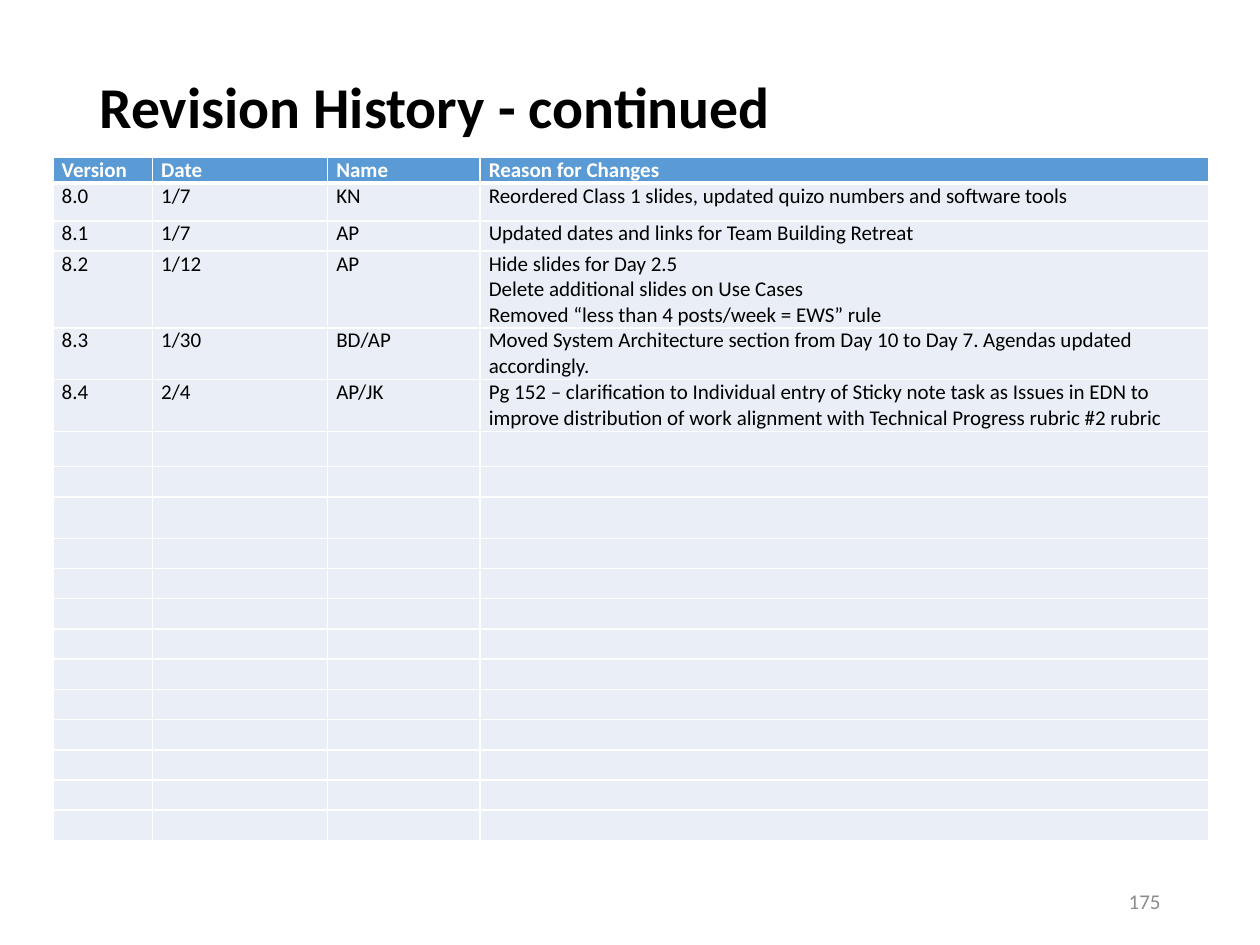
"""Build the continued revision history slide."""
from dataclasses import dataclass

import lxml.etree
import pptx
import pptx.dml.color
import pptx.enum.text
import pptx.oxml.ns
import pptx.util
from pptx.util import Inches


@dataclass(frozen=True)
class Theme:
    font: str = "Calibri"
    title_pt: int = 33
    body_pt: int = 12
    text: str = "000000"
    white: str = "FFFFFF"
    header: str = "5B9BD5"
    body: str = "EAEFF7"
    number: str = "8C8C8C"
    rule_pt: int = 1
    header_rule_pt: int = 3


@dataclass(frozen=True)
class Revision:
    version: str = ""
    date: str = ""
    name: str = ""
    reasons: tuple[str, ...] = ("",)
    height: float = 0.24

    def columns(self) -> list[tuple[str, ...]]:
        return [(self.version,), (self.date,), (self.name,), self.reasons]


THEME = Theme()
COLUMN_WIDTHS = (0.79, 1.39, 1.21, 5.78)
REVISIONS = [
    Revision("Version", "Date", "Name", ("Reason for Changes",), 0.2),
    Revision("8.0", "1/7", "KN",
             ("Reordered Class 1 slides, updated quizo numbers and software tools",), 0.3),
    Revision("8.1", "1/7", "AP", ("Updated dates and links for Team Building Retreat",)),
    Revision("8.2", "1/12", "AP",
             ("Hide slides for Day 2.5", "Delete additional slides on Use Cases",
              "Removed “less than 4 posts/week = EWS” rule"), 0.61),
    Revision("8.3", "1/30", "BD/AP",
             ("Moved System Architecture section from Day 10 to Day 7. "
              "Agendas updated accordingly.",), 0.41),
    Revision("8.4", "2/4", "AP/JK",
             ("Pg 152 – clarification to Individual entry of Sticky note task as Issues in EDN "
              "to improve distribution of work alignment with Technical Progress "
              "rubric #2 rubric",), 0.41),
    Revision(height=0.28), Revision(), Revision(height=0.33),
    *[Revision()] * 10,
]


def rgb(color: str) -> pptx.dml.color.RGBColor:
    return pptx.dml.color.RGBColor.from_string(color)


def add_run(p, text: str, size: int, color: str, bold: bool = False) -> None:
    r = p.add_run()
    r.text = text
    r.font.name, r.font.size, r.font.bold = THEME.font, pptx.util.Pt(size), bold
    r.font.color.rgb = rgb(color)


def set_border(cell, side: str, width: int) -> None:
    qn = pptx.oxml.ns.qn
    ln = lxml.etree.SubElement(cell._tc.get_or_add_tcPr(), qn(f"a:ln{side}"),
                               w=str(pptx.util.Pt(width)))
    fill = lxml.etree.SubElement(ln, qn("a:solidFill"))
    lxml.etree.SubElement(fill, qn("a:srgbClr"), val=THEME.white)


def fill_cell(cell, lines: tuple[str, ...], row: int) -> None:
    header = row == 0
    cell.margin_left = cell.margin_right = Inches(0.07)
    cell.margin_top = cell.margin_bottom = 0
    for side in "LRTB":
        heavy = (side, row) in (("B", 0), ("T", 1))
        set_border(cell, side, THEME.header_rule_pt if heavy else THEME.rule_pt)
    cell.fill.solid()
    cell.fill.fore_color.rgb = rgb(THEME.header if header else THEME.body)
    tf = cell.text_frame
    for i, line in enumerate(lines):
        p = tf.add_paragraph() if i else tf.paragraphs[0]
        if line:
            add_run(p, line, THEME.body_pt, THEME.white if header else THEME.text, header)
        else:
            lxml.etree.SubElement(p._p, pptx.oxml.ns.qn("a:endParaRPr"),
                                  sz=str(THEME.body_pt * 100))


def add_title(s, text: str) -> None:
    sp = s.shapes.title
    sp.left, sp.top, sp.width, sp.height = map(Inches, (0.69, 0.4, 8.62, 1.45))
    tf = sp.text_frame
    tf.vertical_anchor = pptx.enum.text.MSO_ANCHOR.MIDDLE
    tf.margin_bottom = Inches(0.55)
    p = tf.paragraphs[0]
    p.alignment = pptx.enum.text.PP_ALIGN.LEFT
    p.line_spacing = 0.9
    add_run(p, text, THEME.title_pt, THEME.text, True)


def add_history(s, revisions: list[Revision]) -> None:
    height = sum(revision.height for revision in revisions)
    table = s.shapes.add_table(len(revisions), len(COLUMN_WIDTHS), Inches(0.42), Inches(1.25),
                               Inches(sum(COLUMN_WIDTHS)), Inches(height)).table
    for column, width in zip(table.columns, COLUMN_WIDTHS):
        column.width = Inches(width)
    for i, revision in enumerate(revisions):
        table.rows[i].height = Inches(revision.height)
        for j, lines in enumerate(revision.columns()):
            fill_cell(table.cell(i, j), lines, i)


def add_page_number(s, number: str) -> None:
    tf = s.shapes.add_textbox(*map(Inches, (7.06, 6.95, 2.25, 0.4))).text_frame
    tf.word_wrap = True
    tf.vertical_anchor = pptx.enum.text.MSO_ANCHOR.MIDDLE
    p = tf.paragraphs[0]
    p.alignment = pptx.enum.text.PP_ALIGN.RIGHT
    add_run(p, number, THEME.body_pt, THEME.number)


def main() -> None:
    prs = pptx.Presentation()
    prs.slide_width, prs.slide_height = Inches(10), Inches(7.5)
    s = prs.slides.add_slide(prs.slide_layouts.get_by_name("Title Only"))
    add_title(s, "Revision History - continued")
    add_history(s, REVISIONS)
    add_page_number(s, "175")
    prs.save("out.pptx")


if __name__ == "__main__":
    main()
